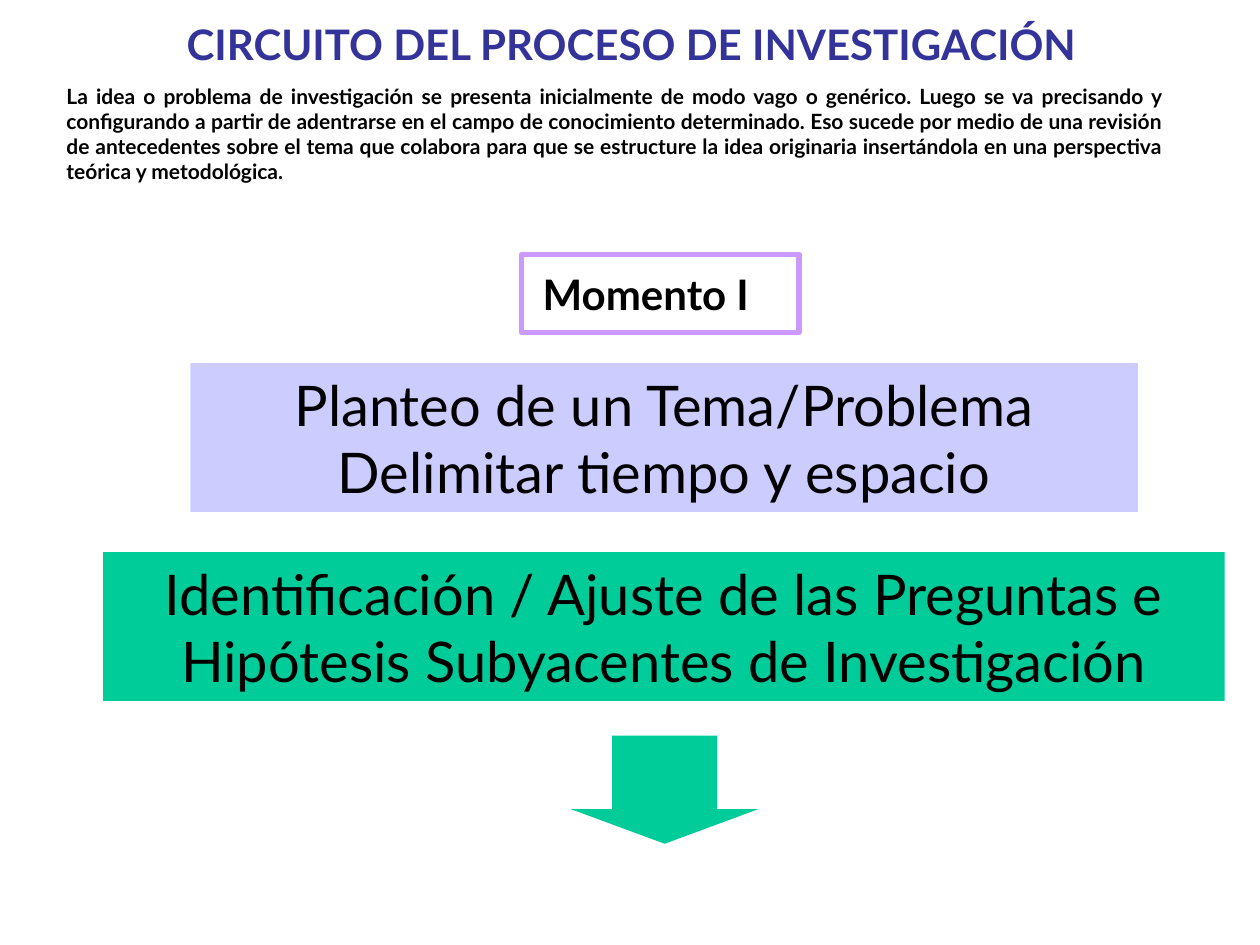
from pptx import Presentation
from pptx.dml.color import RGBColor
from pptx.enum.shapes import MSO_SHAPE
from pptx.enum.text import MSO_ANCHOR, PP_ALIGN
from pptx.util import Cm, Pt

BLACK = RGBColor(0x00, 0x00, 0x00)
NAVY = RGBColor(0x33, 0x33, 0x99)
LILAC = RGBColor(0xCC, 0x99, 0xFF)
LAVENDER = RGBColor(0xCC, 0xCC, 0xFF)
GREEN = RGBColor(0x00, 0xCC, 0x99)
FONT = "Lato"

TITLE = "CIRCUITO DEL PROCESO DE INVESTIGACIÓN"
INTRO = (
    "La idea o problema de investigación se presenta inicialmente de modo vago "
    "o genérico. Luego se va precisando y configurando a partir de adentrarse en "
    "el campo de conocimiento determinado. Eso sucede por medio de una revisión "
    "de antecedentes sobre el tema que colabora para que se estructure la idea "
    "originaria insertándola en una perspectiva teórica y metodológica."
)
MOMENT = "Momento I"

# Left, top, width, height in cm, then fill and lines of text
STEPS = [
    (3.84, 7.32, 19.1, 3, LAVENDER,
     ["Planteo de un Tema/Problema", "Delimitar tiempo y espacio"]),
    (2.08, 11.13, 22.61, 3, GREEN,
     ["Identificación / Ajuste de las Preguntas e "
      "Hipótesis Subyacentes de Investigación"]),
]


def write(shape, lines, size, align=PP_ALIGN.LEFT, color=BLACK, bold=False,
          anchor=MSO_ANCHOR.TOP, wrap=True):
    frame = shape.text_frame
    frame.word_wrap = wrap
    frame.vertical_anchor = anchor
    frame.text = "\n".join(lines)
    for para in frame.paragraphs:
        para.alignment = align
        para.font.name = FONT
        para.font.size = Pt(size)
        para.font.bold = bold
        para.font.color.rgb = color


def add_block(slide, kind, box, fill=None, line=None):
    shape = slide.shapes.add_shape(kind, *map(Cm, box))
    shape.shadow.inherit = False
    if fill is None:
        shape.fill.background()
    else:
        shape.fill.solid()
        shape.fill.fore_color.rgb = fill
    if line is None:
        shape.line.fill.background()
    else:
        shape.line.color.rgb = line
        shape.line.width = Pt(3)
    return shape


def main():
    deck = Presentation()
    deck.slide_width, deck.slide_height = Cm(25.4), Cm(19.05)
    slide = deck.slides.add_slide(deck.slide_layouts[5])

    title = slide.shapes.title
    title.left, title.top = Cm(3.51), Cm(0.25)
    title.width, title.height = Cm(21.69), Cm(1.27)
    write(title, [TITLE], 24, color=NAVY, bold=True)

    intro = slide.shapes.add_textbox(Cm(1.09), Cm(1.55), Cm(22.61), Cm(2.31))
    write(intro, [INTRO], 12, PP_ALIGN.JUSTIFY, bold=True)

    add_block(slide, MSO_SHAPE.RECTANGLE, (10.52, 5.13, 5.59, 1.57), line=LILAC)
    moment = slide.shapes.add_textbox(Cm(10.69), Cm(5.28), Cm(5.23), Cm(1.3))
    write(moment, [MOMENT], 24, bold=True)

    for *box, fill, lines in STEPS:
        step = add_block(slide, MSO_SHAPE.RECTANGLE, box, fill)
        write(step, lines, 32, PP_ALIGN.CENTER, anchor=MSO_ANCHOR.MIDDLE)

    arrow = add_block(slide, MSO_SHAPE.DOWN_ARROW, (11.51, 14.83, 3.78, 2.18), GREEN)
    arrow.adjustments[0] = 0.56
    arrow.adjustments[1] = 0.32

    deck.save("out.pptx")


if __name__ == "__main__":
    main()
